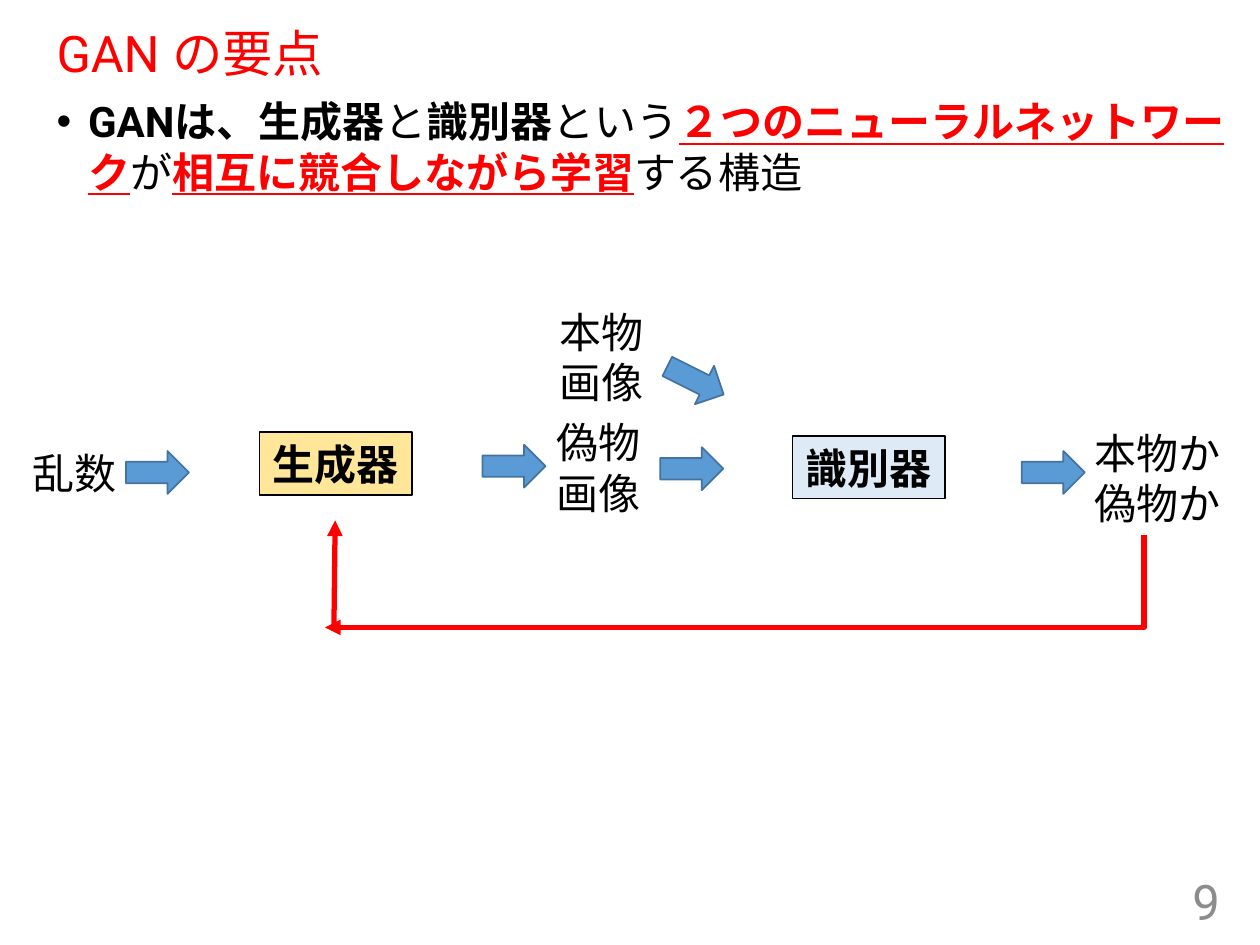
from lxml.etree import SubElement
from pptx import Presentation
from pptx.dml.color import RGBColor
from pptx.enum.shapes import MSO_CONNECTOR as Connector, MSO_SHAPE as Preset
from pptx.enum.text import MSO_ANCHOR as Anchor, MSO_AUTO_SIZE as AutoSize, PP_ALIGN as Align
from pptx.oxml.ns import qn
from pptx.util import Inches, Pt

BLACK = RGBColor(0x00, 0x00, 0x00)
RED = RGBColor(0xFF, 0x00, 0x00)
GRAY = RGBColor(0x8C, 0x8C, 0x8C)
YELLOW = RGBColor(0xFF, 0xE6, 0x99)
PALE_BLUE = RGBColor(0xDE, 0xEB, 0xF7)
BLUE = RGBColor(0x5B, 0x9B, 0xD5)
DARK_BLUE = RGBColor(0x43, 0x73, 0x9E)

COLUMNS, ROWS = 100, 75


class Page:
    heading_font = "Roboto"
    label_font = "Calibri"
    label_size = 24

    def __init__(self, deck):
        self.cell_width = deck.slide_width / COLUMNS
        self.cell_height = deck.slide_height / ROWS
        self.shapes = deck.slides.add_slide(deck.slide_layouts[6]).shapes

    def place(self, *lengths):
        cells = (self.cell_width, self.cell_height) * 2
        return [round(length * cell) for length, cell in zip(lengths, cells)]

    def style(self, span, font, size, color, bold=False, underline=False):
        span.font.name = font
        span.font.size = Pt(size)
        span.font.color.rgb = color
        span.font.bold = bold
        span.font.underline = underline

    def text(self, content, area, font=label_font, size=label_size, color=BLACK,
             align=Align.LEFT, anchor=Anchor.TOP, spacing=1.0):
        frame = self.shapes.add_textbox(*self.place(*area)).text_frame
        frame.word_wrap = True
        frame.vertical_anchor = anchor
        frame.text = content
        for para in frame.paragraphs:
            para.alignment = align
            para.line_spacing = spacing
            for span in para.runs:
                self.style(span, font, size, color)

    def bullet(self, pieces, area):
        frame = self.shapes.add_textbox(*self.place(*area)).text_frame
        frame.word_wrap = True
        para = frame.paragraphs[0]
        para.space_before = Pt(10)
        properties = para._p.get_or_add_pPr()
        properties.set("marL", str(Inches(0.25)))
        properties.set("indent", str(-Inches(0.25)))
        SubElement(properties, qn("a:buFont"), typeface="Arial")
        SubElement(properties, qn("a:buChar"), char="•")
        for content, color, bold in pieces:
            span = para.add_run()
            span.text = content
            self.style(span, self.heading_font, self.label_size, color, bold, color == RED)

    def shape(self, preset, area, fill, line, weight):
        shape = self.shapes.add_shape(preset, *self.place(*area))
        shape.shadow.inherit = False
        shape.fill.solid()
        shape.fill.fore_color.rgb = fill
        shape.line.color.rgb = line
        shape.line.width = Pt(weight)
        return shape

    def network(self, content, left, top, fill):
        box = self.shape(Preset.RECTANGLE, (left, top, 12.1, 5), fill, BLACK, 0.75)
        frame = box.text_frame
        frame.word_wrap = False
        frame.auto_size = AutoSize.SHAPE_TO_FIT_TEXT
        frame.vertical_anchor = Anchor.TOP
        frame.text = content
        para = frame.paragraphs[0]
        para.alignment = Align.CENTER
        self.style(para.runs[0], self.label_font, self.label_size, BLACK, True)

    def block_arrow(self, left, top, rotation=0):
        arrow = self.shape(Preset.RIGHT_ARROW, (left, top, 5, 3.4), BLUE, DARK_BLUE, 1)
        arrow.rotation = rotation

    def feedback(self, kind, start, end):
        connector = self.shapes.add_connector(kind, *self.place(*start, *end))
        connector.line.color.rgb = RED
        connector.line.width = Pt(3)
        SubElement(connector.line._get_or_add_ln(), qn("a:tailEnd"), type="triangle")
        SubElement(connector._element.spPr, qn("a:effectLst"))
        if kind == Connector.ELBOW:
            guides = connector._element.spPr.find(qn("a:prstGeom")).get_or_add_avLst()
            SubElement(guides, qn("a:gd"), name="adj1", fmla="val 0")


def main():
    deck = Presentation()
    deck.slide_width, deck.slide_height = Inches(10), Inches(7.5)
    page = Page(deck)

    page.text("GAN の要点", (3.5, 1.9, 92.5, 5.1), page.heading_font, 28.8, RED,
              anchor=Anchor.MIDDLE, spacing=0.9)
    page.bullet([
        ("GANは、生成器", BLACK, True),
        ("と", BLACK, False),
        ("識別器", BLACK, True),
        ("という", BLACK, False),
        ("２つのニューラルネットワーク", RED, True),
        ("が", BLACK, False),
        ("相互に競合しながら学習", RED, True),
        ("する構造", BLACK, False),
    ], (3.5, 7.1, 94.9, 34.6))
    page.text("9", (75.3, 69.5, 22.5, 4), page.heading_font, 28, GRAY,
              Align.RIGHT, Anchor.MIDDLE)

    page.network("生成器", 20.6, 34.3, YELLOW)
    page.network("識別器", 62.9, 34.6, PALE_BLUE)

    for content, area in [
        ("乱数", (1.6, 35, 11.1, 5)),
        ("本物画像", (43.4, 23.8, 11.1, 9.1)),
        ("偽物画像", (43.2, 32.6, 11.1, 9.1)),
        ("本物か\n偽物か", (85.9, 33.4, 18.3, 9.1)),
    ]:
        page.text(content, area)

    for left, top in [(10, 35.8), (38.3, 35.3), (52.4, 35.5), (81.1, 35.8)]:
        page.block_arrow(left, top)
    page.block_arrow(52.7, 28.5, 26.5)

    page.feedback(Connector.STRAIGHT, (26.5, 49.9), (26.6, 41.3))
    page.feedback(Connector.ELBOW, (90.8, 42.5), (25.8, 49.8))

    deck.save("out.pptx")


if __name__ == "__main__":
    main()
